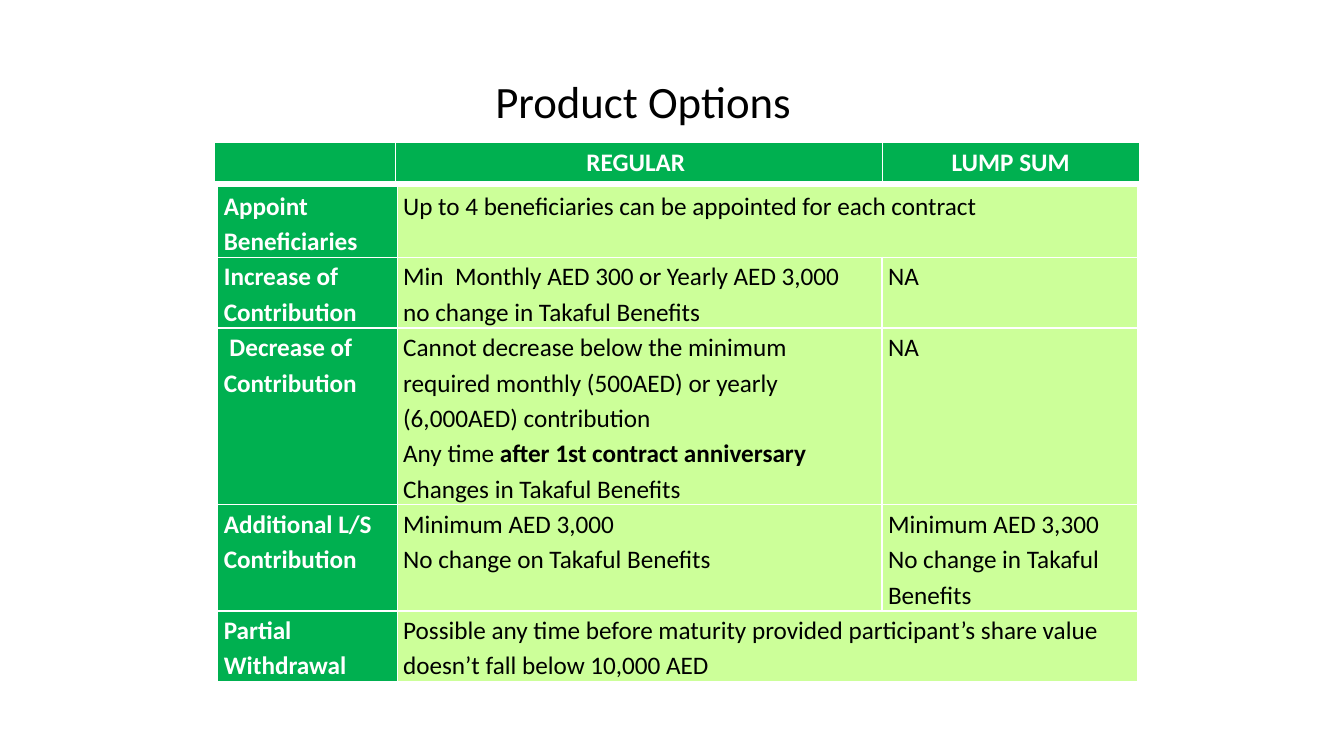
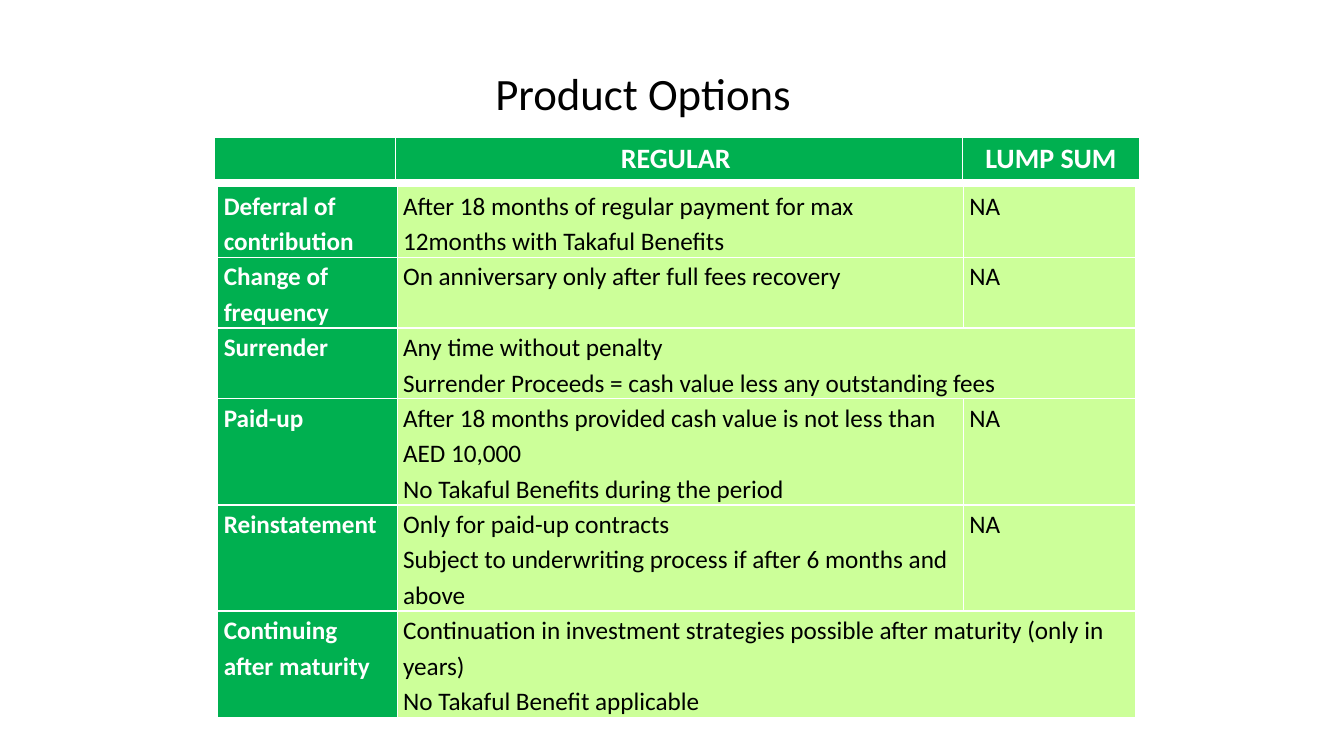
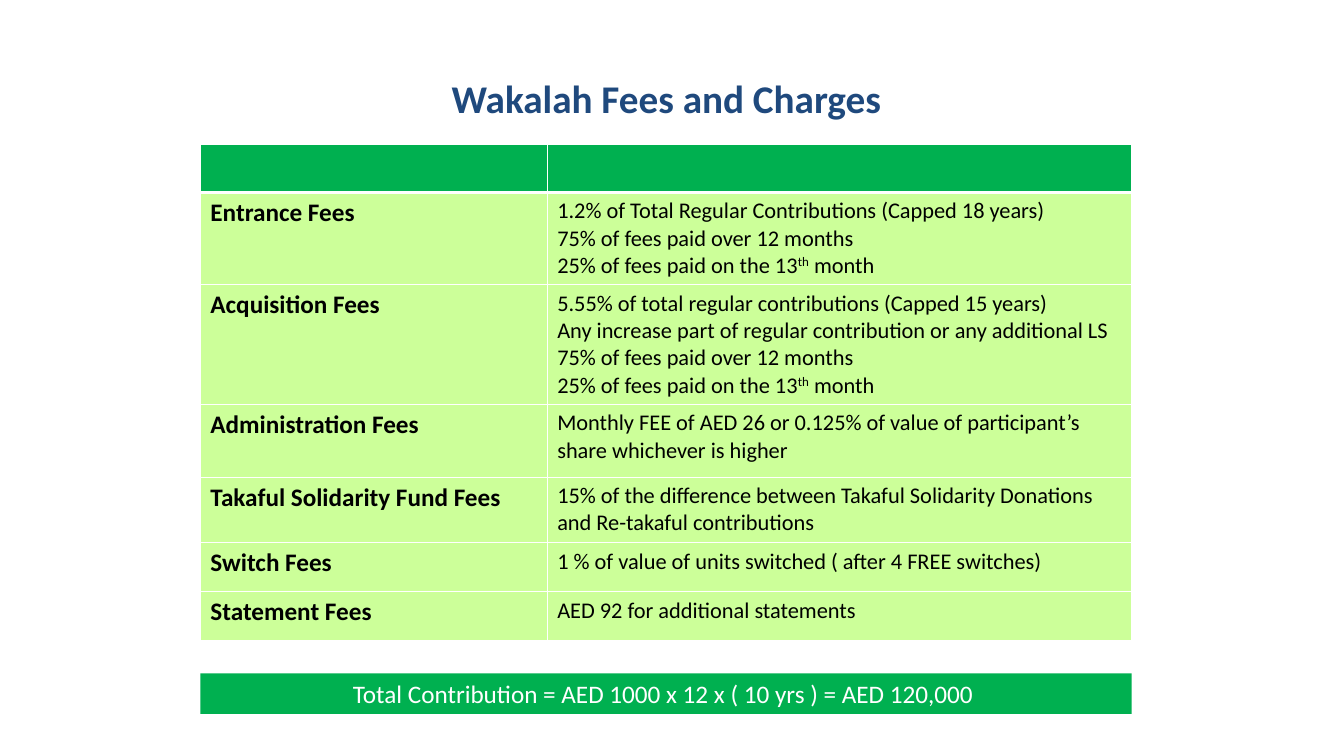
from dataclasses import dataclass
from lxml.etree import SubElement
from pptx import Presentation
from pptx.dml.color import RGBColor
from pptx.enum.shapes import MSO_SHAPE
from pptx.enum.text import MSO_ANCHOR, MSO_AUTO_SIZE, PP_ALIGN
from pptx.oxml.ns import qn
from pptx.util import Cm, Pt


@dataclass(frozen=True)
class Theme:
    font: str = "Calibri"
    green: str = "00B050"
    lime: str = "CCFF99"
    navy: str = "1F497D"
    black: str = "000000"
    white: str = "FFFFFF"
    title: int = 32
    fees: int = 28
    head: int = 20
    text: int = 18
    small: int = 16


@dataclass(frozen=True)
class Look:
    """How one kind of table cell is filled and lettered."""
    fill: str
    color: str
    size: int
    bold: bool = False
    align: PP_ALIGN = PP_ALIGN.LEFT
    tight: bool = False
    base: int = 1


T = Theme()
LABEL = Look(T.green, T.white, T.text, bold=True, tight=True)
ENTRY = Look(T.lime, T.black, T.text, tight=True)
FEE = Look(T.lime, T.black, T.text, bold=True)
TERM = Look(T.lime, T.black, T.small)


def band(size):
    return Look(T.green, T.white, size, bold=True, align=PP_ALIGN.CENTER, base=3)


def border(cell, base):
    """Draw white cell edges, with the bottom one `base` points wide."""
    props = cell._tc.get_or_add_tcPr()
    for spot, (side, width) in enumerate(zip("LRTB", (1, 1, 1, base))):
        line = SubElement(props, qn(f"a:ln{side}"), w=str(Pt(width)))
        fill = SubElement(line, qn("a:solidFill"))
        SubElement(fill, qn("a:srgbClr"), val=T.white)
        props.insert(spot, line)


class Deck:
    def __init__(self):
        self.file = Presentation()
        self.file.slide_width, self.file.slide_height = Cm(33.87), Cm(19.05)
        self.slide = None

    def page(self, title, box, size=T.title, color=T.black, bold=False,
             anchor=MSO_ANCHOR.TOP):
        self.slide = self.file.slides.add_slide(self.file.slide_layouts[5])
        shape = self.slide.shapes.title
        shape.left, shape.top, shape.width, shape.height = map(Cm, box)
        frame = shape.text_frame
        frame.text = title
        frame.auto_size = MSO_AUTO_SIZE.NONE
        frame.vertical_anchor = anchor
        self.style(frame.paragraphs[0], size, color, bold, PP_ALIGN.CENTER)

    def style(self, para, size, color, bold=False, align=PP_ALIGN.LEFT):
        para.alignment = align
        for run in para.runs:
            font = run.font
            font.name, font.size, font.bold = T.font, Pt(size), bold
            font.color.rgb = RGBColor.from_string(color)

    def letter(self, para, text, look):
        """Set text in which *...* is bold and ^...^ is raised."""
        bits = [(bit, odd % 2, up % 2)
                for odd, part in enumerate(text.split("*"))
                for up, bit in enumerate(part.split("^")) if bit]
        for bit, *_ in bits:
            para.add_run().text = bit
        self.style(para, look.size, look.color, look.bold, look.align)
        for run, (_, strong, high) in zip(para.runs, bits):
            if strong:
                run.font.bold = True
            if high:
                run._r.get_or_add_rPr().set("baseline", "30000")

    def fill(self, cell, text, look):
        cell.fill.solid()
        cell.fill.fore_color.rgb = RGBColor.from_string(look.fill)
        border(cell, look.base)
        if look.tight:
            cell.margin_left = cell.margin_right = Cm(0.15)
            cell.margin_top = cell.margin_bottom = 0
        frame = cell.text_frame
        for num, line in enumerate(text.split("\n") if text else []):
            para = frame.add_paragraph() if num else frame.paragraphs[0]
            self.letter(para, line, look)
            if look.tight:
                para.line_spacing = 1.15

    def table(self, left, top, cols, highs, rows, looks, head=None):
        """Add a table; None in a row merges that cell with the one before."""
        grid = self.slide.shapes.add_table(
            len(rows), len(cols), Cm(left), Cm(top),
            Cm(sum(cols)), Cm(sum(highs))).table
        grid.first_row = grid.horz_banding = False
        for col, width in zip(grid.columns, cols):
            col.width = Cm(width)
        for num, (row, high) in enumerate(zip(rows, highs)):
            grid.rows[num].height = Cm(high)
            kinds = [head] * len(cols) if head and num == 0 else looks
            for pos, (text, look) in enumerate(zip(row, kinds)):
                cell = grid.cell(num, pos)
                if text is None:
                    grid.cell(num, pos - 1).merge(cell)
                self.fill(cell, text, look)

    def options(self, top, band_top, size, heads, cols, lines, rows):
        """Add a product page: title, heading band and option table."""
        self.page("Product Options", (5.87, top, 20.68, 1.37))
        high = 1.02 if size == T.text else 1.09
        self.table(5.41, band_top, heads, [high],
                   [["", "REGULAR ", "LUMP SUM"]], [band(size)] * 3)
        self.table(5.49, 4.7, cols, [0.89 * count for count in lines],
                   rows, [LABEL, ENTRY, ENTRY])

    def bar(self, text, left, top, width, height):
        shape = self.slide.shapes.add_shape(
            MSO_SHAPE.RECTANGLE, Cm(left), Cm(top), Cm(width), Cm(height))
        shape.shadow.inherit = False
        shape.fill.solid()
        shape.fill.fore_color.rgb = RGBColor.from_string(T.green)
        shape.line.fill.background()
        frame = shape.text_frame
        frame.text = text
        frame.word_wrap = True
        self.style(frame.paragraphs[0], T.text, T.white, align=PP_ALIGN.CENTER)


def main():
    deck = Deck()
    deck.options(1.73, 3.58, T.text, [4.55, 12.27, 6.48], [4.52, 12.22, 6.43],
                 [2, 2, 5, 3, 2], [
        ["Appoint Beneficiaries",
         "Up to 4 beneficiaries can be appointed for each contract", None],
        ["Increase of\nContribution",
         "Min  Monthly AED 300 or Yearly AED 3,000\n"
         "no change in Takaful Benefits", "NA"],
        [" Decrease of\nContribution",
         "Cannot decrease below the minimum required monthly (500AED) "
         "or yearly (6,000AED) contribution\n"
         "Any time *after 1st contract anniversary*\n"
         "Changes in Takaful Benefits", "NA"],
        ["Additional L/S Contribution",
         "Minimum AED 3,000\nNo change on Takaful Benefits",
         "Minimum AED 3,300\nNo change in Takaful Benefits"],
        ["Partial Withdrawal",
         "Possible any time before maturity provided participant’s share "
         "value doesn’t fall below 10,000 AED", None],
    ])
    deck.options(1.52, 3.45, T.head, [4.55, 14.3, 4.45], [4.52, 14.27, 4.34],
                 [2, 2, 2, 3, 3, 3], [
        ["Deferral of contribution",
         "After 18 months of regular payment for max 12months with "
         "Takaful Benefits", "NA"],
        ["Change of frequency",
         "On anniversary only after full fees recovery", "NA"],
        ["Surrender",
         "Any time without penalty\n"
         "Surrender Proceeds = cash value less any outstanding fees", None],
        ["Paid-up",
         "After 18 months provided cash value is not less than AED 10,000\n"
         "No Takaful Benefits during the period", "NA"],
        ["Reinstatement",
         "Only for paid-up contracts\n"
         "Subject to underwriting process if after 6 months and above", "NA"],
        ["Continuing after maturity",
         "Continuation in investment strategies possible after maturity "
         "(only in years)\nNo Takaful Benefit applicable", None],
    ])

    deck.page("Wakalah Fees and Charges", (5.79, 1.52, 22, 1.9),
              T.fees, T.navy, True, MSO_ANCHOR.MIDDLE)
    split = ("75% of fees paid over 12 months\n"
             "25% of fees paid on the 13^th^ month")
    deck.table(5.05, 3.63, [8.74, 14.73],
               [1.22, 2.32, 3.02, 1.83, 1.65, 1.24, 1.22], [
        ["", ""],
        ["Entrance Fees",
         f"1.2% of Total Regular Contributions (Capped 18 years)\n{split}"],
        ["Acquisition Fees",
         "5.55% of total regular contributions (Capped 15 years)\n"
         "Any increase part of regular contribution or any additional LS\n"
         f"{split}"],
        ["Administration Fees",
         "Monthly FEE of AED 26 or 0.125% of value of participant’s share "
         "whichever is higher"],
        ["Takaful Solidarity Fund Fees",
         "15% of the difference between Takaful Solidarity Donations and "
         "Re-takaful contributions"],
        ["Switch Fees",
         "1 % of value of units switched ( after 4 FREE switches)"],
        ["Statement Fees", "AED 92 for additional statements"],
    ], [FEE, TERM], band(T.text))
    deck.bar("Total Contribution = AED 1000 x 12 x ( 10 yrs ) = AED 120,000 ",
             5.05, 16.97, 23.47, 1.02)
    deck.file.save("out.pptx")


if __name__ == "__main__":
    main()
